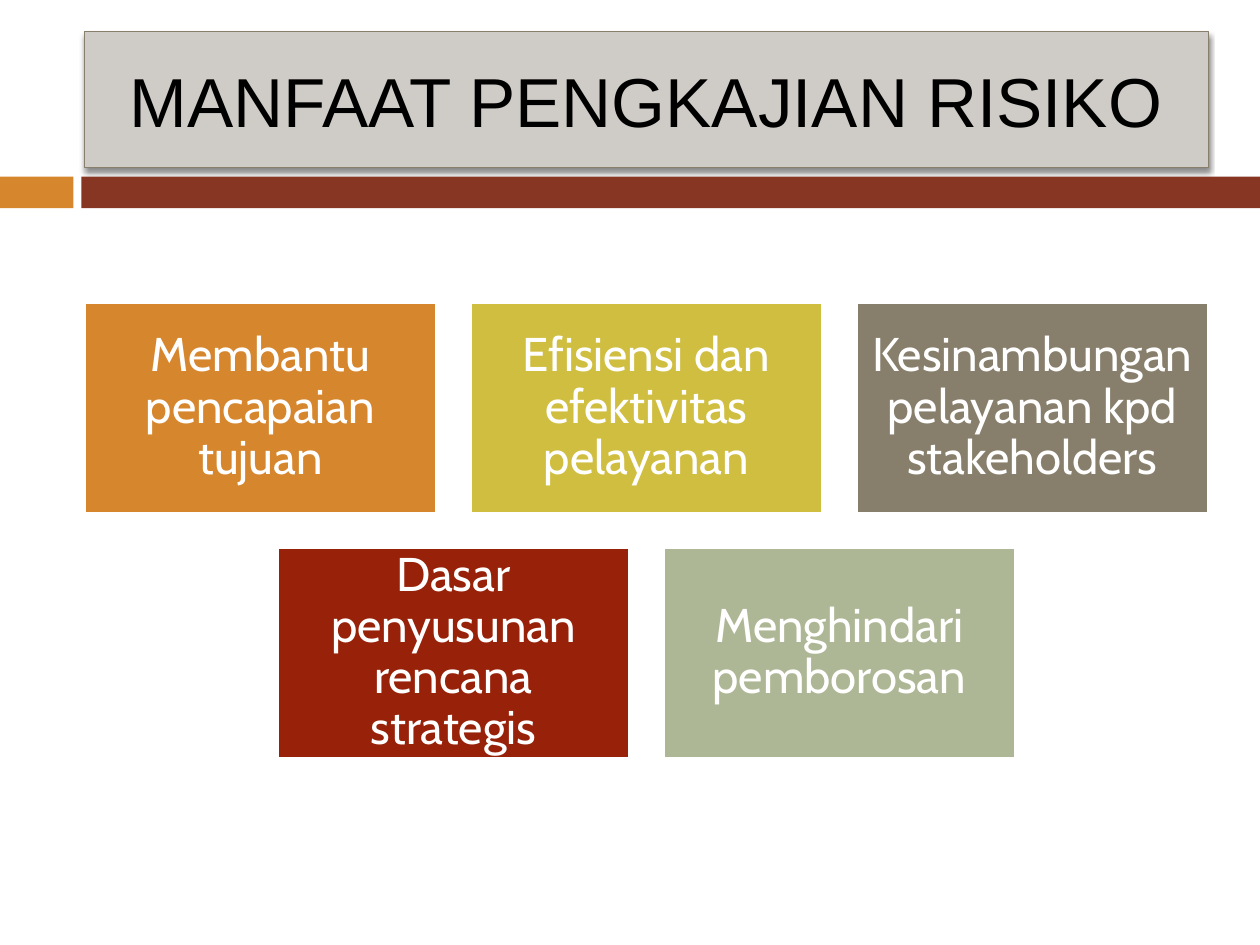
import pptx
import pptx.util
import pptx.dml.color
import pptx.enum.shapes
import pptx.enum.text
import pptx.oxml
from dataclasses import dataclass

Cm, Pt = pptx.util.Cm, pptx.util.Pt


@dataclass(frozen=True)
class Theme:
    orange: str = "D6862D"
    yellow: str = "D0BE40"
    taupe: str = "877F6C"
    red: str = "972109"
    sage: str = "AEB795"
    brown: str = "873624"
    grey: str = "CFCCC8"
    white: str = "FFFFFF"
    black: str = "000000"
    title_font: str = "Arial"
    body_font: str = "Cabin"
    title_size: float = 39.6
    body_size: float = 27


THEME = Theme()

# Benefit boxes, row by row
ROWS = [
    [("Membantu pencapaian tujuan", THEME.orange),
     ("Efisiensi dan efektivitas pelayanan", THEME.yellow),
     ("Kesinambungan pelayanan kpd stakeholders", THEME.taupe)],
    [("Dasar penyusunan rencana strategis", THEME.red),
     ("Menghindari pemborosan", THEME.sage)],
]
BOX_W, BOX_H, GAP = 7.08, 4.24, 0.7
CENTRE_X, TOP = 13.03, 6.1

SHADOW = (
    '<a:effectLst xmlns:a="http://schemas.openxmlformats.org/drawingml/2006/main">'
    '<a:outerShdw blurRad="38100" dist="30480" dir="5400000" rotWithShape="0">'
    '<a:srgbClr val="000000"><a:alpha val="45000"/></a:srgbClr>'
    '</a:outerShdw></a:effectLst>'
)


def rgb(value):
    return pptx.dml.color.RGBColor.from_string(value)


def paint(sp, fill, line=None, width=0):
    sp.fill.solid()
    sp.fill.fore_color.rgb = rgb(fill)
    if line:
        sp.line.color.rgb = rgb(line)
        sp.line.width = Pt(width)
    else:
        sp.line.fill.background()


def write(sp, text, font, size, color):
    tf = sp.text_frame
    tf.text = text
    tf.word_wrap = True
    tf.auto_size = pptx.enum.text.MSO_AUTO_SIZE.NONE
    tf.vertical_anchor = pptx.enum.text.MSO_ANCHOR.MIDDLE
    p = tf.paragraphs[0]
    p.alignment = pptx.enum.text.PP_ALIGN.CENTER
    p.font.name = font
    p.font.size = Pt(size)
    p.font.color.rgb = rgb(color)
    return tf


def add_rect(s, x, y, w, h, fill, line=None, width=0):
    sp = s.shapes.add_shape(pptx.enum.shapes.MSO_SHAPE.RECTANGLE,
                            Cm(x), Cm(y), Cm(w), Cm(h))
    sp.shadow.inherit = False
    paint(sp, fill, line, width)
    return sp


def set_title(s, text):
    sp = s.shapes.title
    sp.left, sp.top, sp.width, sp.height = Cm(1.7), Cm(0.63), Cm(22.66), Cm(2.75)
    paint(sp, THEME.grey, THEME.taupe, 0.79)
    sp.element.spPr.append(pptx.oxml.parse_xml(SHADOW))
    write(sp, text, THEME.title_font, THEME.title_size, THEME.black)


def add_box(s, x, y, text, fill):
    sp = add_rect(s, x, y, BOX_W, BOX_H, fill, THEME.white, 1.5)
    tf = write(sp, text, THEME.body_font, THEME.body_size, THEME.white)
    tf.margin_left = tf.margin_right = tf.margin_top = tf.margin_bottom = Cm(0.28)
    tf.paragraphs[0].line_spacing = 0.9


def add_box_rows(s):
    for i, row in enumerate(ROWS):
        row_w = len(row) * (BOX_W + GAP) - GAP
        for j, (text, fill) in enumerate(row):
            x = CENTRE_X - row_w / 2 + j * (BOX_W + GAP)
            add_box(s, x, TOP + i * (BOX_H + GAP), text, fill)


def main():
    prs = pptx.Presentation()
    prs.slide_width, prs.slide_height = Cm(25.4), Cm(19.05)
    s = prs.slides.add_slide(prs.slide_layouts[5])

    # Title and the band under it
    set_title(s, "MANFAAT PENGKAJIAN RISIKO")
    add_rect(s, 0, 3.56, 1.48, 0.64, THEME.orange)
    add_rect(s, 1.64, 3.56, 23.76, 0.64, THEME.brown)

    # Benefits, each row centred
    add_box_rows(s)

    prs.save("out.pptx")


if __name__ == "__main__":
    main()
